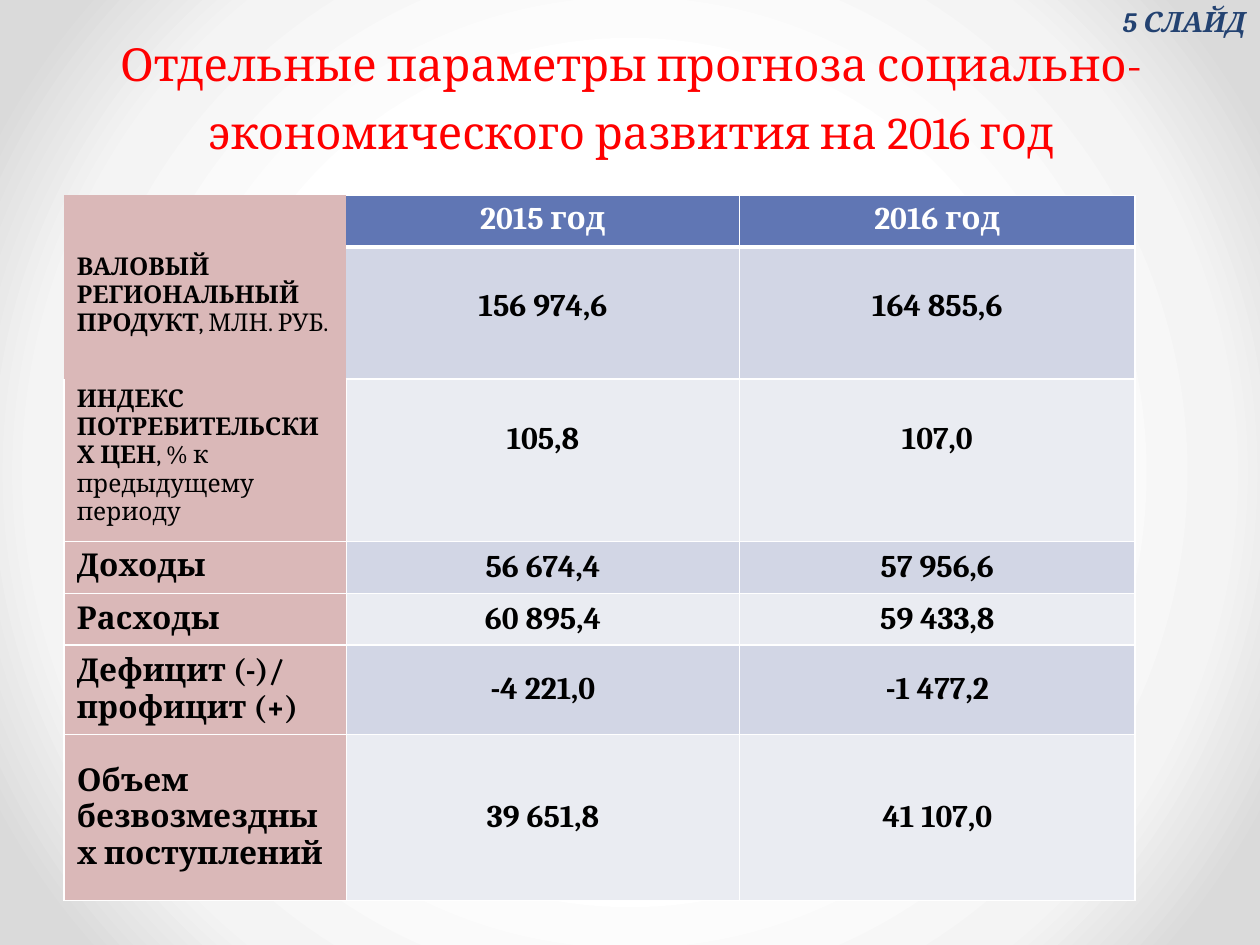
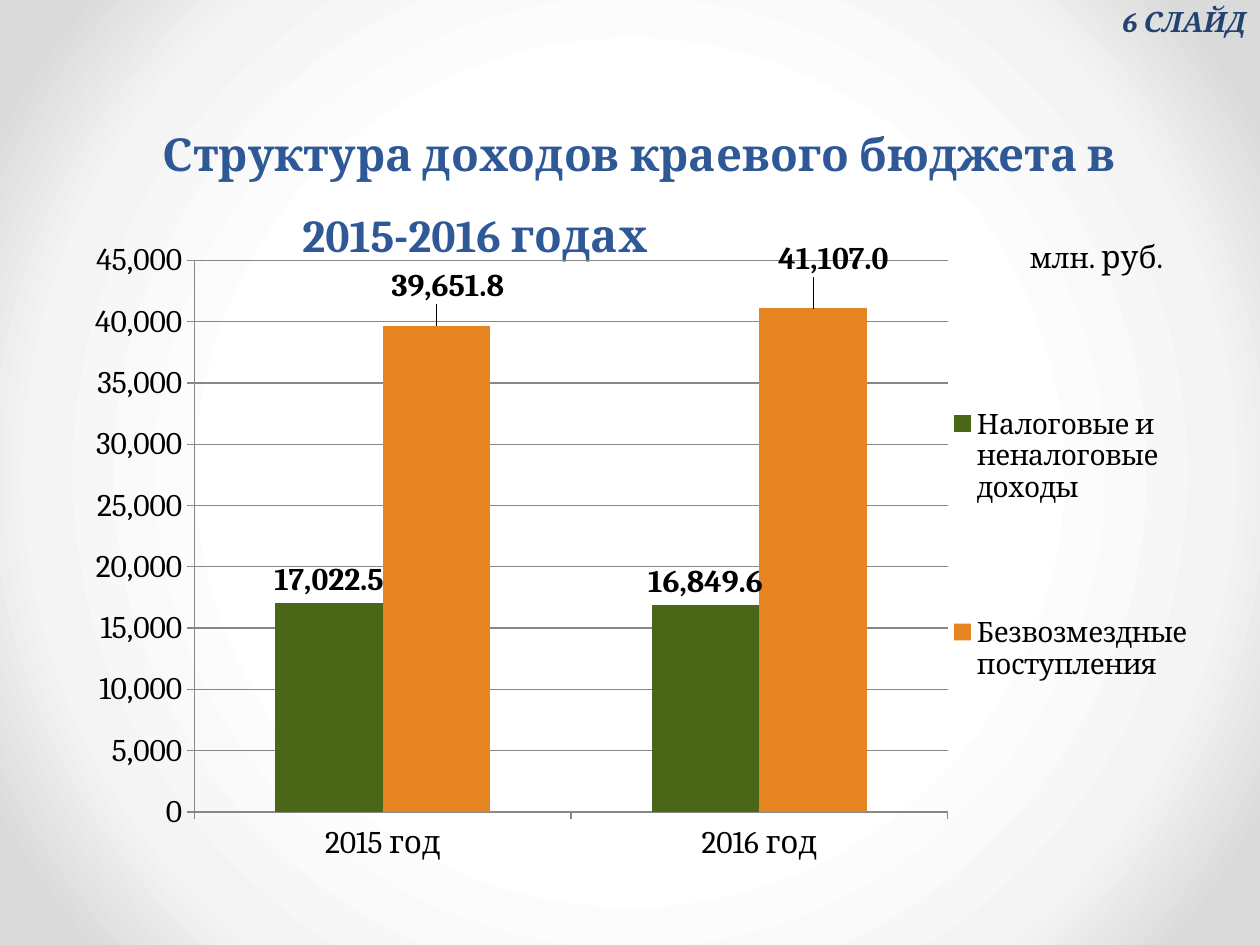
from lxml import etree
from pptx import Presentation
from pptx.chart.data import CategoryChartData
from pptx.dml.color import RGBColor
from pptx.enum import chart as charts, text
from pptx.oxml import parse_xml
from pptx.oxml.ns import nsdecls, qn
from pptx.util import Inches, Pt

FONT = "Cambria"
BLACK, WHITE, RED = "000000", "FFFFFF", "FF0000"
NAVY, BLUE, HEADER = "234271", "2F5897", "6076B4"
PINK, BAND_DARK, BAND_LIGHT = "DAB8B8", "D2D6E5", "EAECF2"
GREEN, ORANGE, GRID = "4A6717", "E68422", "878787"
BACKDROP_STOPS = [(50, WHITE), (76, "F4F4F4"), (92, "DADADA")]
CENTER, LEFT, RIGHT = text.PP_ALIGN.CENTER, text.PP_ALIGN.LEFT, text.PP_ALIGN.RIGHT
TOP, MIDDLE, BOTTOM = (text.MSO_ANCHOR.TOP, text.MSO_ANCHOR.MIDDLE,
                       text.MSO_ANCHOR.BOTTOM)
YEARS = ["2015 год", "2016 год"]


def color(value):
    return RGBColor.from_string(value)


def style_font(font, size, ink=BLACK, bold=False, italic=False):
    font.name, font.size = FONT, Pt(size)
    font.bold, font.italic = bold, italic
    font.color.rgb = color(ink)


def write(para, words, size=18, ink=BLACK, bold=False, italic=False,
          align=LEFT, spacing=None, indent=None):
    """Append a formatted span to a paragraph."""
    span = para.add_run()
    span.text = words
    style_font(span.font, size, ink, bold, italic)
    para.alignment = align
    if spacing:
        para.line_spacing = spacing
    if indent:
        para._p.get_or_add_pPr().set("marL", str(Inches(indent)))


def set_borders(cell, **widths):
    """Draw white cell borders; a width of 0 hides that side."""
    props = cell._tc.get_or_add_tcPr()
    for side in ("L", "R", "T", "B"):
        width = widths.get(side, 1)
        line = etree.SubElement(props, qn(f"a:ln{side}"), w=str(Pt(width)))
        if width:
            fill = etree.SubElement(line, qn("a:solidFill"))
            etree.SubElement(fill, qn("a:srgbClr"), val=WHITE)
        else:
            etree.SubElement(line, qn("a:noFill"))


def manual_layout(**values):
    items = "".join(f'<c:{key} val="{value}"/>' for key, value in values.items())
    return parse_xml(f'<c:layout {nsdecls("c")}><c:manualLayout>{items}'
                     "</c:manualLayout></c:layout>")


class Slides:
    def __init__(self):
        self.deck = Presentation()
        self.deck.slide_width, self.deck.slide_height = Inches(10), Inches(7.5)
        self.page = None
        self.paint_backdrop()

    def paint_backdrop(self):
        """Give the master a radial gradient shared by all slides."""
        master = self.deck.slide_master
        master.background.fill.gradient()
        old = next(master.element.iter(qn("a:gradFill")))
        stops = "".join(f'<a:gs pos="{pos * 1000}"><a:srgbClr val="{tint}"/></a:gs>'
                        for pos, tint in BACKDROP_STOPS)
        old.getparent().replace(old, parse_xml(
            f'<a:gradFill {nsdecls("a")} rotWithShape="1"><a:gsLst>{stops}</a:gsLst>'
            '<a:path path="circle"><a:fillToRect l="50000" t="50000" r="50000" '
            'b="50000"/></a:path></a:gradFill>'))

    def add_page(self):
        self.page = self.deck.slides.add_slide(self.deck.slide_layouts[5])

    def title(self, place, lines, **style):
        """Fill the title; each line is its words and its own format."""
        box = self.page.shapes.title
        box.left, box.top, box.width, box.height = map(Inches, place)
        frame = box.text_frame
        frame.word_wrap = True
        frame.auto_size = text.MSO_AUTO_SIZE.NONE
        frame.vertical_anchor = BOTTOM
        for number, (words, extra) in enumerate(lines):
            para = frame.add_paragraph() if number else frame.paragraphs[0]
            write(para, words, **{"size": 26, "align": CENTER, **style, **extra})

    def label(self, place, spans, inset=0.1, **style):
        box = self.page.shapes.add_textbox(*map(Inches, place))
        frame = box.text_frame
        frame.word_wrap = True
        frame.margin_left = Inches(inset)
        for words, size in spans:
            write(frame.paragraphs[0], words, size, **style)

    def slide_mark(self, number):
        self.label((8.72, -0.01, 1.36, 0.37), [(f"{number} СЛАЙД", 16)],
                   inset=0.19, ink=NAVY, bold=True, italic=True)

    def cell(self, cell, paragraphs, fill, anchor=MIDDLE, margin=0.05,
             borders=None, **style):
        """Each paragraph is a list of (words, size, bold) spans."""
        set_borders(cell, **(borders or {}))
        cell.fill.solid()
        cell.fill.fore_color.rgb = color(fill)
        cell.vertical_anchor = anchor
        cell.margin_top = Inches(margin)
        frame = cell.text_frame
        for number, spans in enumerate(paragraphs):
            para = frame.add_paragraph() if number else frame.paragraphs[0]
            for words, size, bold in spans:
                write(para, words, size, bold=bold, **style)

    def table(self, place, widths, heights, rows):
        """Build the forecast table; rows hold label paragraphs and two values."""
        grid = self.page.shapes.add_table(len(rows) + 1, len(widths),
                                          *map(Inches, place)).table
        grid.first_row = grid.horz_banding = False
        for column, width in zip(grid.columns, widths):
            column.width = Inches(width)
        for row, height in zip(grid.rows, heights):
            row.height = Inches(height)
        hidden = dict.fromkeys("LRTB", 0)
        self.cell(grid.cell(0, 0), [], PINK, borders=hidden)
        for column, year in enumerate(YEARS, 1):
            self.cell(grid.cell(0, column), [[(year, 18, True)]], HEADER, TOP,
                      borders={"B": 3, "L": column - 1}, ink=WHITE, align=CENTER)
        for number, (name, *values) in enumerate(rows, 1):
            borders = hidden if number == 1 else {"T": 0} if number == 2 else None
            self.cell(grid.cell(number, 0), name, PINK,
                      TOP if number <= 3 else MIDDLE, borders=borders)
            tall = number <= 2
            for column, value in enumerate(values, 1):
                edges = {"T": 3 if number == 1 else 1}
                if number == 1 and column == 1:
                    edges["L"] = 0
                self.cell(grid.cell(number, column), [[(value, 18, True)]],
                          BAND_DARK if number % 2 else BAND_LIGHT,
                          TOP if tall else MIDDLE, 0.33 if tall else 0.05,
                          edges, align=CENTER)

    def column_chart(self, place, series, shifts):
        """Shifts move the labels of the last series, as parts of the chart size."""
        data = CategoryChartData(number_format="#,##0.0")
        data.categories = YEARS
        for name, values, _ in series:
            data.add_series(name, values)
        chart = self.page.shapes.add_chart(
            charts.XL_CHART_TYPE.COLUMN_CLUSTERED, *map(Inches, place), data).chart
        style_font(chart.font, 18)
        chart.has_title = False
        self.axes(chart)
        chart.has_legend = True
        legend = chart.legend
        legend.position = charts.XL_LEGEND_POSITION.RIGHT
        legend.include_in_layout = False
        style_font(legend.font, 16)
        legend._element.find(qn("c:legendPos")).addnext(manual_layout(
            xMode="edge", yMode="edge", x=0.775, y=0.1, w=0.225, h=0.77))
        plot = chart.plots[0]
        plot.gap_width, plot.overlap, plot.vary_by_categories = 150, 0, False
        for bars, (_, _, fill) in zip(plot.series, series):
            bars.format.fill.solid()
            bars.format.fill.fore_color.rgb = color(fill)
            labels = bars.data_labels
            labels.show_value = True
            labels.number_format = "#,##0.0"
            labels.number_format_is_linked = False
            labels.position = charts.XL_LABEL_POSITION.OUTSIDE_END
            style_font(labels.font, 18, bold=True)
        for number, (across, down) in enumerate(shifts):
            label = bars.points[number].data_label
            style_font(label.font, 18, bold=True)
            label.position = charts.XL_LABEL_POSITION.OUTSIDE_END
            element = bars.data_labels._element.findall(qn("c:dLbl"))[number]
            element.insert(1, manual_layout(x=across, y=down))
        area = chart._chartSpace.chart.plotArea
        for old in area.findall(qn("c:layout")):
            area.remove(old)
        area.insert(0, manual_layout(layoutTarget="inner", xMode="edge", yMode="edge",
                                     x=0.115, y=0.046, w=0.664, h=0.85))

    def axes(self, chart):
        values = chart.value_axis
        values.minimum_scale, values.maximum_scale = 0, 45000
        values.major_unit = 5000
        values.tick_labels.number_format = "#,##0"
        values.tick_labels.number_format_is_linked = False
        values.has_major_gridlines = True
        values.major_gridlines.format.line.color.rgb = color(GRID)
        for axis in (values, chart.category_axis):
            axis.major_tick_mark = charts.XL_TICK_MARK.OUTSIDE
            axis.format.line.color.rgb = color(GRID)
            style_font(axis.tick_labels.font, 18)


def main():
    slides = Slides()

    slides.add_page()
    slides.title((0.51, 0.44, 9, 0.87),
                 [("Отдельные параметры прогноза социально-экономического "
                   "развития на 2016 год", {})], ink=RED, spacing=Pt(39))
    slides.table(
        (0.51, 1.55, 8.5, 5.6), [2.24, 3.12, 3.14],
        [0.41, 1.05, 1.29, 0.41, 0.41, 0.71, 1.32],
        [([[("ВАЛОВЫЙ РЕГИОНАЛЬНЫЙ ПРОДУКТ", 14, True), (", МЛН. РУБ.", 14, False)]],
          "156 974,6", "164 855,6"),
         ([[("ИНДЕКС ПОТРЕБИТЕЛЬСКИХ ЦЕН", 14, True),
            (", % к предыдущему периоду", 14, False)]], "105,8", "107,0"),
         ([[("Доходы", 18, True)]], "56 674,4", "57 956,6"),
         ([[("Расходы", 18, True)]], "60 895,4", "59 433,8"),
         ([[("Дефицит (-)/", 18, True)], [("профицит (+)", 18, True)]],
          "-4 221,0", "-1 477,2"),
         ([[("Объем безвозмездных поступлений", 18, True)]],
          "39 651,8", "41 107,0")])
    slides.slide_mark(5)

    slides.add_page()
    slides.title((0.59, 0.7, 8.98, 1.43),
                 [("Структура доходов краевого бюджета в", {}),
                  ("2015-2016 годах", {"align": LEFT, "indent": 1.71})],
                 ink=BLUE, bold=True, spacing=1.5)
    slides.column_chart(
        (0.51, 1.83, 9, 5.15),
        [("Налоговые и неналоговые\nдоходы", (17022.5, 16849.6), GREEN),
         ("Безвозмездные\nпоступления", (39651.8, 41107), ORANGE)],
        shifts=[(0.01, -0.025), (0.018, -0.04)])
    slides.label((7.6, 1.83, 1.73, 0.4), [("млн", 16), (". руб.", 18)], align=RIGHT)
    slides.slide_mark(6)

    slides.deck.save("out.pptx")


if __name__ == "__main__":
    main()
